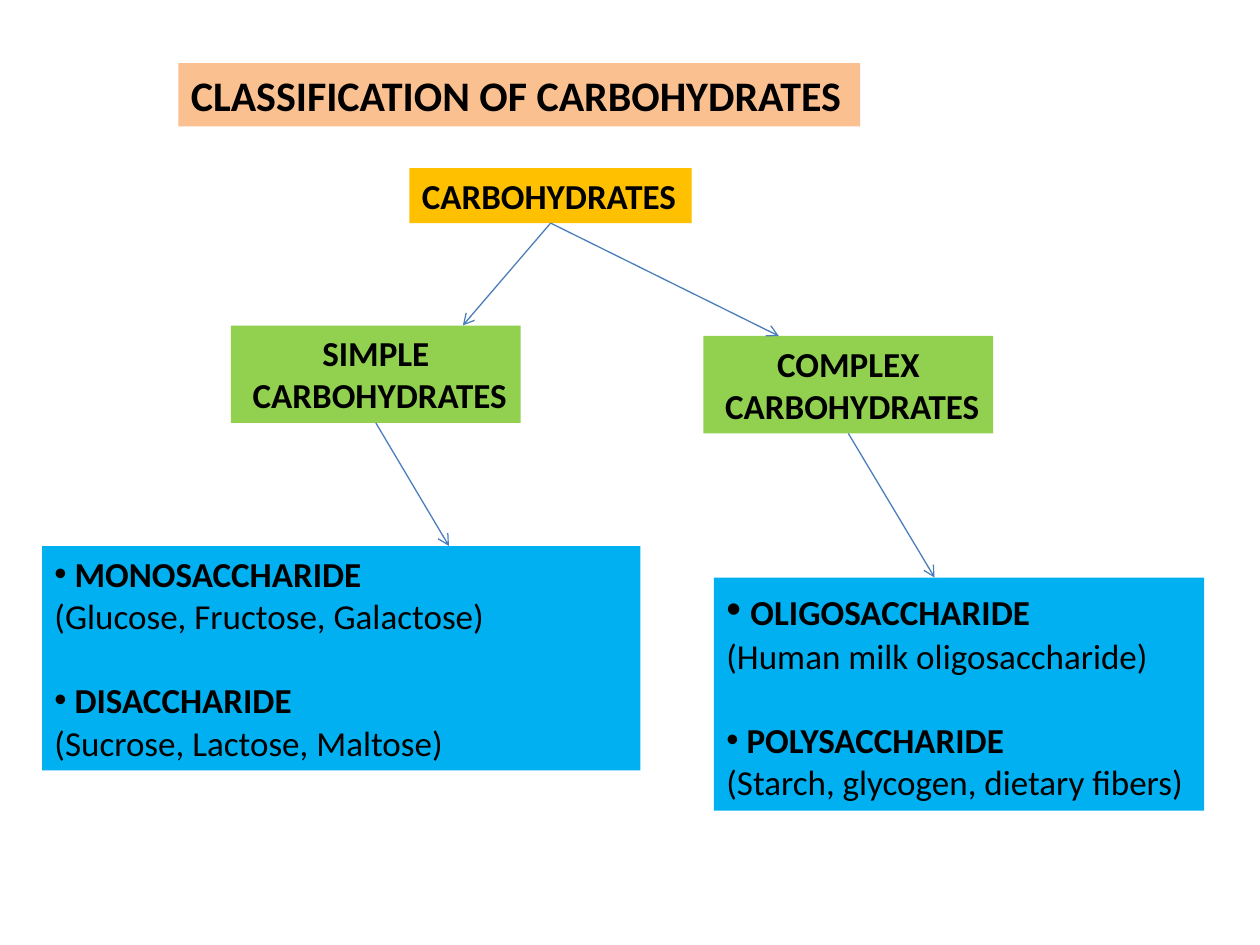
from collections import namedtuple
from dataclasses import dataclass

from lxml import etree
from pptx import Presentation
from pptx.dml.color import RGBColor
from pptx.enum.shapes import MSO_CONNECTOR
from pptx.enum.text import PP_ALIGN
from pptx.oxml.ns import qn
from pptx.util import Pt

LINE = MSO_CONNECTOR.STRAIGHT
LEFT, MID = PP_ALIGN.LEFT, PP_ALIGN.CENTER

Box = namedtuple("Box", "x y w h")


@dataclass(frozen=True)
class Theme:
    font: str = "Calibri"
    ink: str = "000000"
    title: str = "FAC090"
    root: str = "FFC000"
    branch: str = "92D050"
    leaf: str = "00B0F0"
    arrow: str = "4B7EBC"
    big: float = 24
    body: float = 20
    gap: float = 24.4
    stroke: float = 0.75


THEME = Theme()


def color(code):
    return RGBColor.from_string(code)


def add_panel(slide, box, fill, wrap=False):
    panel = slide.shapes.add_textbox(*map(Pt, box))
    panel.fill.solid()
    panel.fill.fore_color.rgb = color(fill)
    panel.text_frame.word_wrap = wrap
    return panel.text_frame


def style(para, size, bold=True, align=LEFT):
    para.alignment = align
    font = para.font
    font.name, font.size, font.bold = THEME.font, Pt(size), bold
    font.color.rgb = color(THEME.ink)


def add_label(slide, box, fill, lines, size=THEME.body, align=LEFT):
    frame = add_panel(slide, box, fill)
    frame.text = "\n".join(lines)
    for para in frame.paragraphs:
        style(para, size, align=align)


def add_bullet(para):
    props = para._p.get_or_add_pPr()
    font = etree.Element(qn("a:buFont"), typeface="Arial")
    mark = etree.Element(qn("a:buChar"), char="•")
    props.insert(0, font)
    font.addnext(mark)


def add_leaf(slide, box, groups, lead=THEME.body, wrap=False):
    frame = add_panel(slide, box, THEME.leaf, wrap)
    for index, (name, detail) in enumerate(groups):
        head = frame.add_paragraph() if index else frame.paragraphs[0]
        style(head, THEME.body)
        add_bullet(head)
        space = head.add_run()
        space.text = " "
        space.font.size = Pt(THEME.body if index else lead)
        head.add_run().text = name
        if index:
            head.space_before = Pt(THEME.gap)
        note = frame.add_paragraph()
        note.text = detail
        style(note, THEME.body, bold=False)


def add_arrow(slide, start, end, part):
    ends = (start.x + start.w / 2, start.y + start.h,
            end.x + end.w * part, end.y)
    arrow = slide.shapes.add_connector(LINE, *map(Pt, ends))
    arrow.line.color.rgb = color(THEME.arrow)
    arrow.line.width = Pt(THEME.stroke)
    etree.SubElement(arrow.line._get_or_add_ln(), qn("a:tailEnd"), type="arrow")
    etree.SubElement(arrow._element.spPr, qn("a:effectLst"))


def add_tree(slide, area):
    def place(x, y, w, h):
        return Box(area.x + x, area.y + y, w, h)

    root = place(210, 0, 161.3, 31.5)
    simple = place(108, 90, 165.6, 55.7)
    complex_box = place(378, 96, 165.6, 55.7)
    sugars = place(0, 216, 342, 128.2)
    chains = place(384, 234, 280.1, 133.2)

    add_label(slide, root, THEME.root, ["CARBOHYDRATES"])
    for box, kind in ((simple, "SIMPLE"), (complex_box, "COMPLEX")):
        add_label(slide, box, THEME.branch, [kind, " CARBOHYDRATES"], align=MID)
    add_leaf(slide, sugars, [
        ("MONOSACCHARIDE", "(Glucose, Fructose, Galactose)"),
        ("DISACCHARIDE", "(Sucrose, Lactose, Maltose)"),
    ], wrap=True)
    add_leaf(slide, chains, [
        ("OLIGOSACCHARIDE", "(Human milk oligosaccharide)"),
        ("POLYSACCHARIDE", "(Starch, glycogen, dietary fibers)"),
    ], lead=THEME.big)

    for start, end, part in (
        (root, simple, 0.8),
        (root, complex_box, 0.26),
        (simple, sugars, 0.68),
        (complex_box, chains, 0.45),
    ):
        add_arrow(slide, start, end, part)


def main():
    deck = Presentation()
    deck.slide_width, deck.slide_height = Pt(720), Pt(540)
    slide = deck.slides.add_slide(deck.slide_layouts[6])
    add_label(slide, Box(102, 36, 389.6, 36.3), THEME.title,
              ["CLASSIFICATION OF CARBOHYDRATES"], THEME.big)
    add_tree(slide, Box(24, 96, 664, 367))
    deck.save("out.pptx")


if __name__ == "__main__":
    main()
